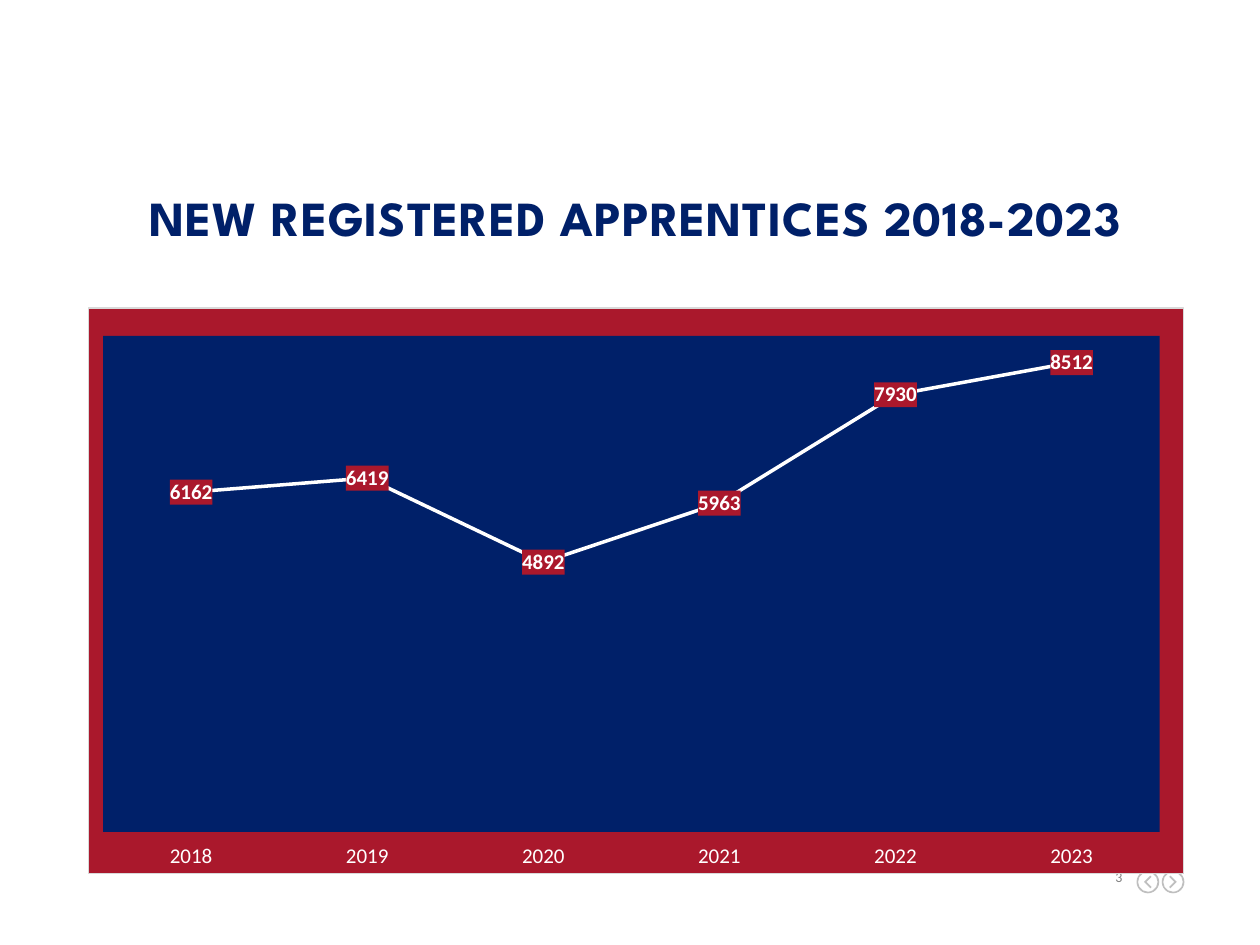
from lxml import etree
from pptx import Presentation
from pptx.chart.data import CategoryChartData
from pptx.dml.color import RGBColor
from pptx.enum.chart import (XL_CHART_TYPE as ChartType, XL_LABEL_POSITION as LabelPos,
                             XL_MARKER_STYLE as Marker, XL_TICK_LABEL_POSITION as TickPos,
                             XL_TICK_MARK as Tick)
from pptx.enum.shapes import MSO_SHAPE as Shape
from pptx.enum.text import MSO_ANCHOR as Anchor, PP_ALIGN as Align
from pptx.oxml.ns import qn
from pptx.util import Inches, Pt

NAVY = RGBColor(0x00, 0x20, 0x69)
RED = RGBColor(0xAA, 0x18, 0x2C)
WHITE = RGBColor(0xFF, 0xFF, 0xFF)
BLACK = RGBColor(0x00, 0x00, 0x00)
GRAY = RGBColor(0x80, 0x80, 0x80)
ICON_GRAY = RGBColor(0xBF, 0xBF, 0xBF)
BORDER = RGBColor(0xD9, 0xD9, 0xD9)

APPRENTICES = {"2018": 6162, "2019": 6419, "2020": 4892,
               "2021": 5963, "2022": 7930, "2023": 8512}


def set_font(font, size, color, name="Calibri", bold=False):
    font.size, font.name, font.bold = Pt(size), name, bold
    font.color.rgb = color


def set_text(sp, text, *, size, color, name="Calibri", bold=False,
             align=Align.LEFT, spacing=0):
    tf = sp.text_frame
    tf.word_wrap = True
    tf.vertical_anchor = Anchor.TOP
    tf.margin_left = tf.margin_right = tf.margin_top = tf.margin_bottom = 0
    p = tf.paragraphs[0]
    p.alignment = align
    r = p.add_run()
    r.text = text
    set_font(r.font, size, color, name, bold)
    r.font._element.set("spc", str(round(spacing * 100)))


def paint(sp, color):
    sp.shadow.inherit = False
    sp.fill.solid()
    sp.fill.fore_color.rgb = color
    sp.line.fill.background()


def add_nav_button(slide, cx, cy, direction):
    """Ringed chevron; direction is -1 for back and 1 for forward."""
    size = 0.18
    ring = slide.shapes.add_shape(Shape.DONUT, Inches(cx - size / 2), Inches(cy - size / 2),
                                  Inches(size), Inches(size))
    ring.adjustments[0] = 0.07
    paint(ring, ICON_GRAY)

    outline = [(-0.02, -0.05), (0.03, 0), (-0.02, 0.05),
               (-0.03, 0.04), (0.01, 0), (-0.03, -0.04)]
    points = [(Inches(cx + direction * x), Inches(cy + y)) for x, y in outline]
    fb = slide.shapes.build_freeform(*points[0])
    fb.add_line_segments(points[1:], close=True)
    paint(fb.convert_to_shape(), ICON_GRAY)


def fill_chart_part(parent, color, border=None):
    """Give a chart or plot area a solid fill and an optional border."""
    sp_pr = parent.find(qn("c:spPr"))
    if sp_pr is None:
        sp_pr = etree.Element(qn("c:spPr"))
        before = parent.find(qn("c:txPr"))
        if before is None:
            parent.append(sp_pr)
        else:
            before.addprevious(sp_pr)

    def solid(owner, rgb):
        fill = etree.SubElement(owner, qn("a:solidFill"))
        etree.SubElement(fill, qn("a:srgbClr"), val=str(rgb))

    solid(sp_pr, color)
    line = etree.SubElement(sp_pr, qn("a:ln"), w=str(Pt(0.75)))
    if border is None:
        etree.SubElement(line, qn("a:noFill"))
    else:
        solid(line, border)


def place_plot(plot_area, x, y, w, h):
    """Fix the inner plot area as fractions of the chart."""
    layout = plot_area.find(qn("c:layout"))
    if layout is None:
        layout = etree.Element(qn("c:layout"))
        plot_area.insert(0, layout)
    manual = etree.SubElement(layout, qn("c:manualLayout"))
    settings = dict(layoutTarget="inner", xMode="edge", yMode="edge", x=x, y=y, w=w, h=h)
    for tag, val in settings.items():
        etree.SubElement(manual, qn(f"c:{tag}"), val=str(val))


def add_line_chart(slide):
    data = CategoryChartData()
    data.categories = list(APPRENTICES)
    data.add_series("Series 1", list(APPRENTICES.values()))
    chart = slide.shapes.add_chart(ChartType.LINE, Inches(0.7), Inches(2.44),
                                   Inches(8.7), Inches(4.5), data).chart
    chart.has_legend = chart.has_title = False
    set_font(chart.font, 10, BLACK)

    # Axes
    axis = chart.category_axis
    axis.major_tick_mark = axis.minor_tick_mark = Tick.NONE
    axis.tick_label_position = TickPos.LOW
    axis.format.line.fill.background()
    set_font(axis.tick_labels.font, 12, WHITE)
    values = chart.value_axis
    values.minimum_scale, values.maximum_scale = 0, 9000
    values.has_major_gridlines = False
    values.visible = False

    # Line and its value labels
    plot = chart.plots[0]
    plot.vary_by_categories = False
    series = plot.series[0]
    series.smooth = False
    series.marker.style = Marker.NONE
    series.format.line.color.rgb = WHITE
    series.format.line.width = Pt(2)
    labels = series.data_labels
    labels.show_value = True
    labels.position = LabelPos.CENTER
    set_font(labels.font, 12, WHITE, bold=True)
    fill_chart_part(labels._element, RED)

    # Backgrounds
    space = chart._chartSpace
    plot_area = space.chart.plotArea
    place_plot(plot_area, 0.013, 0.049, 0.965, 0.877)
    fill_chart_part(plot_area, NAVY)
    fill_chart_part(space, RED, BORDER)


def main():
    prs = Presentation()
    prs.slide_width, prs.slide_height = Inches(10), Inches(7.5)
    slide = prs.slides.add_slide(prs.slide_layouts[5])

    # Title
    title = slide.shapes.title
    title.left, title.top = Inches(1.1), Inches(1.49)
    title.width, title.height = Inches(7.89), Inches(0.7)
    set_text(title, "NEW REGISTERED APPRENTICES 2018-2023", size=28, color=NAVY,
             name="League Spartan", bold=True, align=Align.CENTER, spacing=0.5)

    # Page number and navigation buttons
    number = slide.shapes.add_textbox(Inches(8.68), Inches(6.89), Inches(0.23), Inches(0.13))
    set_text(number, "3", size=8, color=GRAY, align=Align.RIGHT, spacing=0.3)
    for cx, direction in ((9.31, 1), (9.11, -1)):
        add_nav_button(slide, cx, 7, direction)

    add_line_chart(slide)
    prs.save("out.pptx")


if __name__ == "__main__":
    main()
